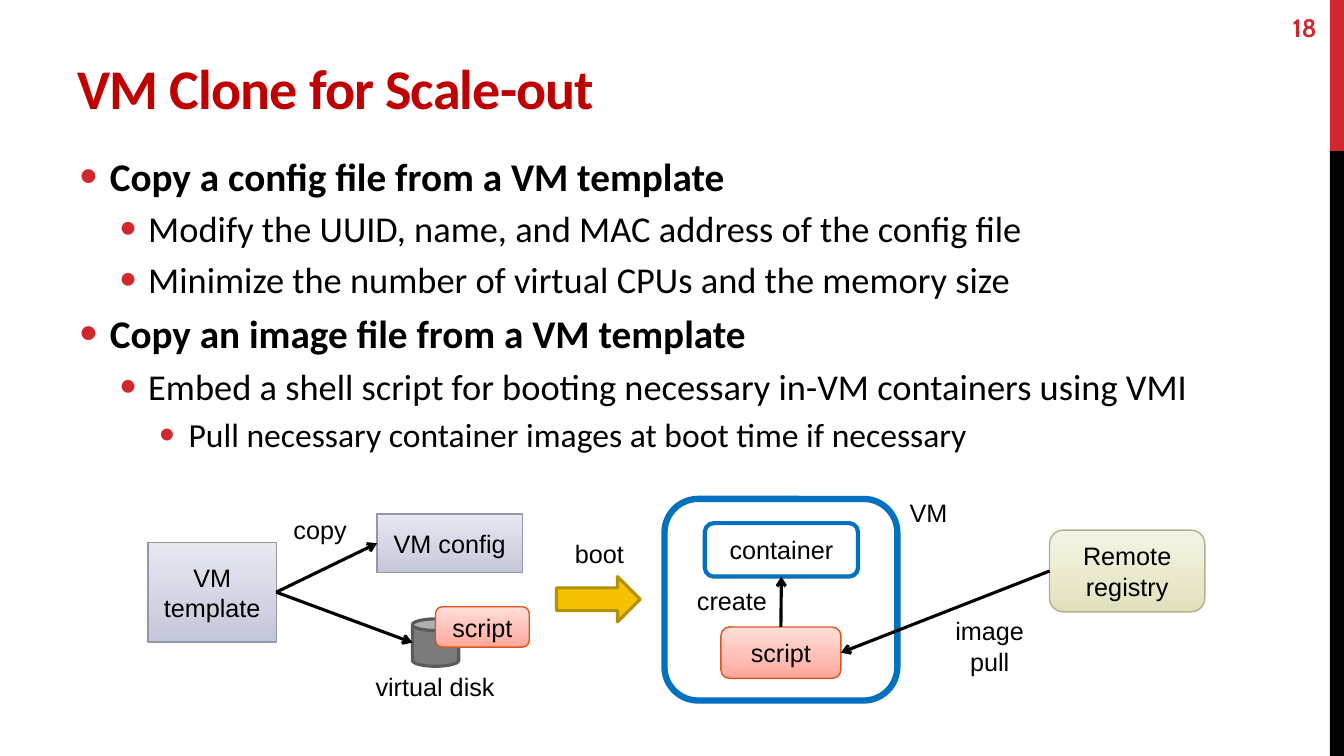
from copy import deepcopy

from pptx import Presentation
from pptx.dml.color import RGBColor
from pptx.enum import shapes, text
from pptx.oxml.ns import qn
from pptx.oxml.xmlchemy import OxmlElement
from pptx.util import Inches, Pt

RED = RGBColor(0xD1, 0x28, 0x2E)
TITLE_RED = RGBColor(0xC0, 0x00, 0x00)
BLACK = RGBColor(0x00, 0x00, 0x00)
WHITE = RGBColor(0xFF, 0xFF, 0xFF)
BLUE = RGBColor(0x00, 0x70, 0xC0)
GRAY, GRAY_EDGE = RGBColor(0x7A, 0x7A, 0x7A), RGBColor(0x5A, 0x5A, 0x5A)
GOLD, GOLD_EDGE = RGBColor(0xF5, 0xC2, 0x01), RGBColor(0xB5, 0x90, 0x01)
LAVENDER = [RGBColor(0xC3, 0xC5, 0xD9), RGBColor(0xD1, 0xD3, 0xE3), RGBColor(0xE8, 0xE8, 0xF1)]
LAVENDER_EDGE = RGBColor(0x94, 0x96, 0xA9)
OLIVE = [RGBColor(0xE1, 0xE0, 0xBC), RGBColor(0xE9, 0xE8, 0xCB), RGBColor(0xF4, 0xF4, 0xE5)]
OLIVE_EDGE = RGBColor(0xB1, 0xB0, 0x8E)
SALMON = [RGBColor(0xFF, 0xA6, 0x98), RGBColor(0xFF, 0xBC, 0xB3), RGBColor(0xFF, 0xDE, 0xD9)]
SALMON_EDGE = RGBColor(0xDC, 0x55, 0x1F)

KIND = shapes.MSO_SHAPE
ALIGN = text.PP_ALIGN
ANCHOR = text.MSO_ANCHOR
GRADIENT_POSITIONS = (0, 0.35, 1)
BODY_SIZES = (28, 26, 24)
BODY_INDENTS = ((0.3, -0.3), (0.68, -0.28), (1.08, -0.29))
BODY_LINES = [
    (0, "Copy a config file from a VM template"),
    (1, "Modify the UUID, name, and MAC address of the config file"),
    (1, "Minimize the number of virtual CPUs and the memory size"),
    (0, "Copy an image file from a VM template"),
    (1, "Embed a shell script for booting necessary in-VM containers using VMI"),
    (2, "Pull necessary container images at boot time if necessary"),
]


def apply_format(target, values):
    for name, value in values.items():
        setattr(target, name, value)


def place(shape, box):
    names = ("left", "top", "width", "height")
    apply_format(shape, dict(zip(names, map(Inches, box))))


def write(frame, lines, size=18, font="Arial", color=BLACK, bold=False, align=ALIGN.CENTER):
    for index, line in enumerate(lines):
        para = frame.paragraphs[0] if index == 0 else frame.add_paragraph()
        para.alignment = align
        span = para.add_run()
        span.text = line
        apply_format(span.font, {"size": Pt(size), "name": font, "bold": bold})
        span.font.color.rgb = color


def paint(shape, fill):
    """Fill with nothing, one colour, or a three-stop vertical gradient."""
    if fill is None:
        shape.fill.background()
    elif isinstance(fill, list):
        shape.fill.gradient()
        shape.fill.gradient_angle = 90
        stop_list = next(shape._element.iter(qn("a:gsLst")))
        stop_list.append(deepcopy(stop_list[-1]))
        for stop, position, color in zip(shape.fill.gradient_stops, GRADIENT_POSITIONS, fill):
            stop.position = position
            stop.color.rgb = color
    else:
        shape.fill.solid()
        shape.fill.fore_color.rgb = fill


def add_box(page, kind, box, fill, edge=None, weight=1, lines=()):
    shape = page.shapes.add_shape(kind, *map(Inches, box))
    shape.shadow.inherit = False
    paint(shape, fill)
    if edge is None:
        shape.line.fill.background()
    else:
        shape.line.color.rgb = edge
        shape.line.width = Pt(weight)
    shape.text_frame.vertical_anchor = ANCHOR.MIDDLE
    write(shape.text_frame, lines)
    return shape


def add_label(page, box, lines, anchor=ANCHOR.TOP, **style):
    label = page.shapes.add_textbox(*map(Inches, box))
    apply_format(label.text_frame, {"word_wrap": False, "vertical_anchor": anchor})
    write(label.text_frame, lines, **style)


def side(shape, across, down):
    """Point on a shape, given as fractions of its width and height."""
    return int(shape.left + shape.width * across), int(shape.top + shape.height * down)


def add_arrow(page, start, end):
    arrow = page.shapes.add_connector(shapes.MSO_CONNECTOR.STRAIGHT, *start, *end)
    arrow.line.color.rgb = BLACK
    arrow.line.width = Pt(2.25)
    head = OxmlElement("a:tailEnd")
    head.set("type", "arrow")
    arrow.line._get_or_add_ln().append(head)
    arrow._element.spPr.append(OxmlElement("a:effectLst"))


def add_side_bar(page, box):
    left, top, width, height = box
    red_height = height / 5
    add_box(page, KIND.RECTANGLE, (left, top, width, red_height), RED)
    add_box(page, KIND.RECTANGLE, (left, top + red_height, width, height - red_height), BLACK)
    # Page number beside the bar
    add_label(page, (left - 1.03, top + 0.07, 1, 0.4), ["18"], ANCHOR.MIDDLE,
              font="Cabin", color=RED, bold=True, align=ALIGN.RIGHT)


def add_title(page, box):
    title = page.shapes.title
    place(title, box)
    apply_format(title.text_frame, {"vertical_anchor": ANCHOR.BOTTOM,
                                    "auto_size": text.MSO_AUTO_SIZE.NONE})
    write(title.text_frame, ["VM Clone for Scale-out"], 40, "Calibri", TITLE_RED, True, ALIGN.LEFT)
    title.text_frame.paragraphs[0].runs[0].font._element.set("spc", "-60")


def add_bullet(para):
    properties = para._element.get_or_add_pPr()
    left, first = BODY_INDENTS[para.level]
    properties.set("marL", str(Inches(left)))
    properties.set("indent", str(Inches(first)))
    color = OxmlElement("a:buClr")
    value = OxmlElement("a:srgbClr")
    value.set("val", str(RED))
    color.append(value)
    properties.append(color)
    for tag, name, setting in (("a:buSzPct", "val", "130000"),
                               ("a:buFont", "typeface", "Arial"),
                               ("a:buChar", "char", "•")):
        part = OxmlElement(tag)
        part.set(name, setting)
        properties.append(part)


def add_body(page, box):
    body = page.placeholders[1]
    place(body, box)
    frame = body.text_frame
    apply_format(frame, {"margin_left": Inches(0.12), "margin_right": Inches(0.12),
                         "auto_size": text.MSO_AUTO_SIZE.NONE})
    write(frame, [line for _, line in BODY_LINES], font="Calibri", align=ALIGN.LEFT)
    for para, (level, _) in zip(frame.paragraphs, BODY_LINES):
        para.level = level
        if level == 0:
            para.space_before = Pt(6)
        apply_format(para.runs[0].font, {"size": Pt(BODY_SIZES[level]), "bold": level == 0})
        add_bullet(para)


def add_diagram(page, box):
    left, top, _, _ = box

    def at(x, y, width, height=0.4):
        return left + x, top + y, width, height

    # Template and the copied files
    template = add_box(page, KIND.RECTANGLE, at(0, 0.5, 1.27, 0.99), LAVENDER, LAVENDER_EDGE,
                       lines=["VM", "template"])
    config = add_box(page, KIND.RECTANGLE, at(2.27, 0.22, 1.44, 0.58), LAVENDER, LAVENDER_EDGE,
                     lines=["VM config"])
    disk = add_box(page, KIND.CAN, at(2.62, 1.26, 0.46, 0.47), GRAY, GRAY_EDGE, 2.25)
    add_box(page, KIND.ROUNDED_RECTANGLE, at(2.85, 1.14, 0.93), SALMON, SALMON_EDGE,
            lines=["script"])
    # Boot step
    add_box(page, KIND.RIGHT_ARROW, at(4.05, 0.84, 0.83, 0.45), GOLD, GOLD_EDGE, 2.25)
    # Running VM and the registry
    add_box(page, KIND.ROUNDED_RECTANGLE, at(5.12, 0.07, 2.31, 2), None, BLUE, 4.5)
    container = add_box(page, KIND.ROUNDED_RECTANGLE, at(5.52, 0.31, 1.52, 0.53), WHITE, BLUE, 3,
                        ["container"])
    script = add_box(page, KIND.ROUNDED_RECTANGLE, at(5.68, 1.34, 1.19, 0.51), SALMON, SALMON_EDGE,
                     lines=["script"])
    registry = add_box(page, KIND.ROUNDED_RECTANGLE, at(8.94, 0.38, 1.54, 0.81), OLIVE, OLIVE_EDGE,
                       lines=["Remote", "registry"])
    # Arrows
    for target in (config, disk):
        add_arrow(page, side(template, 1, 0.5), side(target, 0, 0.5))
    add_arrow(page, side(script, 0.5, 0), side(container, 0.5, 1))
    add_arrow(page, side(registry, 0, 0.5), side(script, 1, 0.5))
    # Labels
    for spot, lines in (((1.34, 0.17, 0.73), ["copy"]),
                        ((2.15, 1.73, 1.39), ["virtual disk"]),
                        ((4.13, 0.41, 0.69), ["boot"]),
                        ((5.34, 0.88, 0.9), ["create"]),
                        ((7.45, 0, 0.58), ["VM"]),
                        ((7.9, 1.18, 0.89, 0.71), ["image", "pull"])):
        add_label(page, at(*spot), lines)


def main():
    deck = Presentation()
    apply_format(deck, {"slide_width": Inches(13.33), "slide_height": Inches(7.5)})
    page = deck.slides.add_slide(deck.slide_layouts[1])
    add_side_bar(page, (13.19, 0, 0.14, 7.5))
    add_title(page, (0.67, 0.17, 12.02, 1.08))
    add_body(page, (0.67, 1.46, 12.02, 5.64))
    add_diagram(page, (1.47, 4.88, 10.48, 2.13))
    deck.save("out.pptx")


if __name__ == "__main__":
    main()
